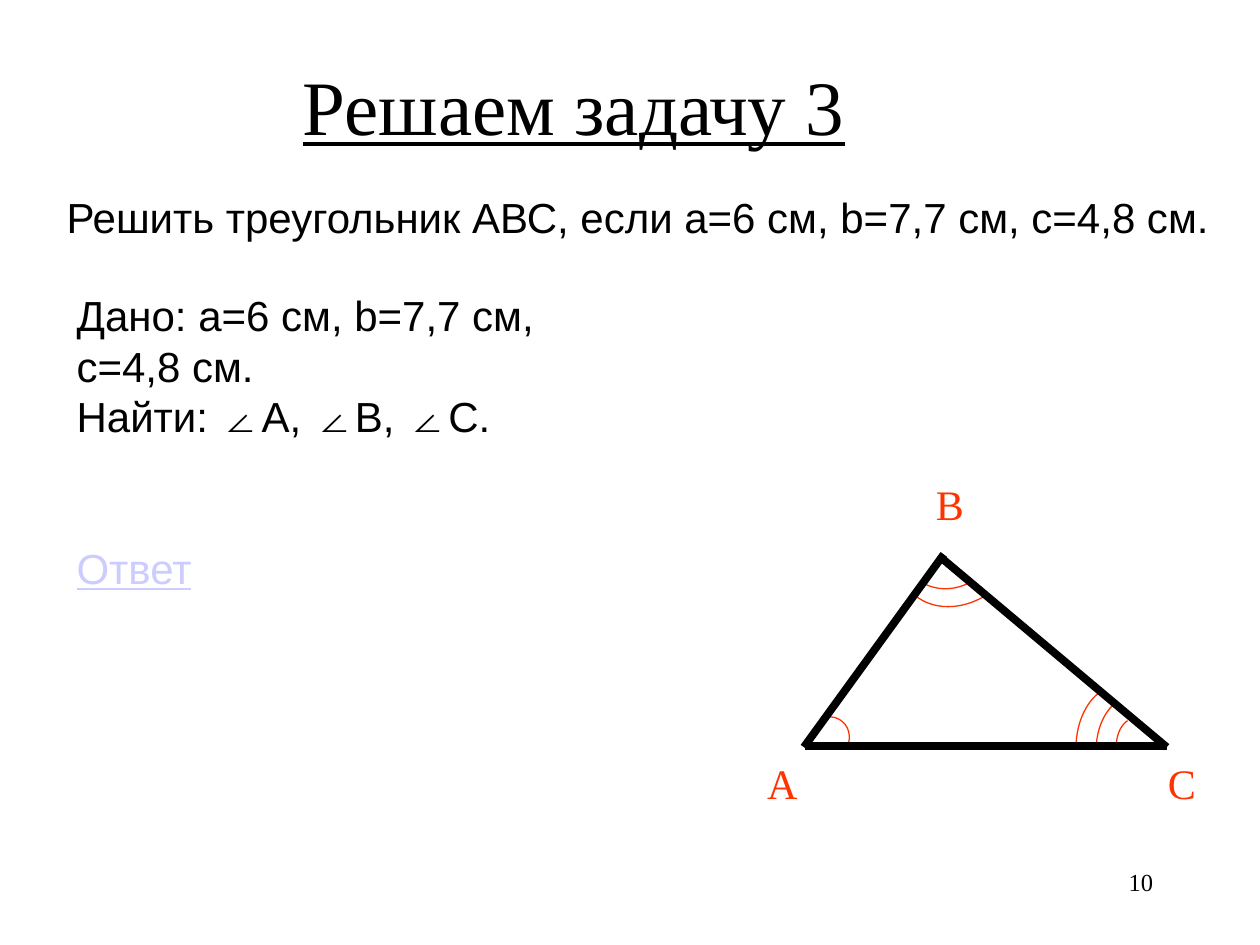
"""Build a slide that sets a triangle-solving problem beside its drawing."""
import copy

import pptx
import pptx.dml.color
import pptx.enum.shapes
import pptx.enum.text
import pptx.oxml.ns
import pptx.util
from lxml import etree

Inches = pptx.util.Inches
Pt = pptx.util.Pt
ALIGN = pptx.enum.text.PP_ALIGN
qn = pptx.oxml.ns.qn

THEME = {
    "sans": "Arial", "serif": "Times New Roman",
    "ink": "000000", "accent": "FF3300", "link": "CCCCFF",
    "title": 44, "body": 24, "number": 14,
    "side": 4.5, "arc": 0.75, "answer_gap": 58,
}

TITLE = "Решаем задачу 3"
PROBLEM = "Решить треугольник АВС, если a=6 см, b=7,7 см, c=4,8 см."
GIVEN = [
    ["Дано: a=6 см, b=7,7 см,"],
    ["c=4,8 см."],
    ["Найти: ", "∠", "А, ", "∠", "B, ", "∠", "C."],
]
ANSWER = "Ответ"
PAGE_NUMBER = "10"

SIDES = [
    ((7.45, 4.41), (9.26, 5.93)),
    ((6.38, 5.93), (7.49, 4.4)),
    ((6.39, 5.92), (9.26, 5.92)),
]
VERTEX_LABELS = [("C", 9.17, 5.96), ("А", 5.99, 5.96), ("В", 7.33, 3.75)]
ANGLE_ARCS = [
    {"curve": [(8.84, 5.59), (8.76, 5.66), (8.7, 5.8), (8.7, 5.95)],
     "center": (8.94, 5.95)},
    {"curve": [(8.75, 5.48), (8.63, 5.55), (8.54, 5.73), (8.54, 5.93)],
     "center": (8.86, 5.93)},
    {"curve": [(6.56, 5.69), (6.57, 5.69), (6.59, 5.69), (6.6, 5.69),
               (6.69, 5.7), (6.75, 5.78), (6.74, 5.87),
               (6.74, 5.89), (6.73, 5.9), (6.73, 5.92)],
     "center": (6.58, 5.85)},
    {"curve": [(7.72, 4.61), (7.59, 4.69), (7.44, 4.69), (7.33, 4.63)],
     "center": (7.55, 4.25)},
    {"curve": [(7.8, 4.74), (7.62, 4.84), (7.42, 4.84), (7.28, 4.74)],
     "center": (7.65, 4.27)},
    {"curve": [(8.95, 5.72), (8.9, 5.75), (8.86, 5.83), (8.86, 5.92)],
     "center": (9.02, 5.92)},
]


def color(name):
    return pptx.dml.color.RGBColor.from_string(THEME[name])


def add_run(paragraph, text, size, font, ink="ink", underline=None):
    run = paragraph.add_run()
    run.text = text
    run.font.size = Pt(THEME[size])
    run.font.name = THEME[font]
    run.font.color.rgb = color(ink)
    run.font.underline = underline


def add_text_box(slide, left, top, width, height):
    box = slide.shapes.add_textbox(
        Inches(left), Inches(top), Inches(width), Inches(height))
    box.text_frame.word_wrap = True
    return box.text_frame


def add_title(slide):
    title = slide.shapes.title
    title.left, title.top = Inches(0.75), Inches(0)
    title.width, title.height = Inches(7.61), Inches(1.25)
    title.text_frame.vertical_anchor = pptx.enum.text.MSO_ANCHOR.BOTTOM
    paragraph = title.text_frame.paragraphs[0]
    paragraph.alignment = ALIGN.CENTER
    add_run(paragraph, TITLE, "title", "serif", underline=True)


def add_problem(slide):
    frame = add_text_box(slide, 0.43, 1.47, 9.57, 0.5)
    add_run(frame.paragraphs[0], PROBLEM, "body", "sans")
    frame = add_text_box(slide, 0.51, 2.25, 4.8, 2.5)
    paragraph = frame.paragraphs[0]
    for line in GIVEN:
        for text in line:
            add_run(paragraph, text, "body", "sans")
        paragraph = frame.add_paragraph()
    paragraph.space_before = Pt(THEME["answer_gap"])
    add_run(paragraph, ANSWER, "body", "sans", "link", True)


def add_arc(slide, curve, center):
    points = [(Inches(x), Inches(y)) for x, y in curve + [center]]
    builder = slide.shapes.build_freeform(*points[0])
    builder.add_line_segments(points[1:], close=False)
    arc = builder.convert_to_shape()
    arc.shadow.inherit = False
    arc.fill.background()
    arc.line.color.rgb = color("accent")
    arc.line.width = Pt(THEME["arc"])

    outline = next(arc._element.iter(qn("a:path")))
    segments = list(outline)
    radius = segments[-1]
    controls = [segment[0] for segment in segments[1:-1]]
    for segment in segments[1:]:
        outline.remove(segment)
    for start in range(0, len(controls), 3):
        bezier = etree.SubElement(outline, qn("a:cubicBezTo"))
        bezier.extend(controls[start:start + 3])
    sector = copy.deepcopy(outline)
    sector.set("stroke", "0")
    sector.append(radius)
    etree.SubElement(sector, qn("a:close"))
    outline.set("fill", "none")
    outline.addnext(sector)


def add_side(slide, start, end):
    side = slide.shapes.add_connector(
        pptx.enum.shapes.MSO_CONNECTOR.STRAIGHT,
        *(Inches(value) for value in start + end))
    side.line.color.rgb = color("ink")
    side.line.width = Pt(THEME["side"])
    etree.SubElement(side._element.spPr, qn("a:effectLst"))


def add_triangle(slide):
    for arc in ANGLE_ARCS:
        add_arc(slide, **arc)
    for start, end in SIDES:
        add_side(slide, start, end)
    for letter, left, top in VERTEX_LABELS:
        frame = add_text_box(slide, left, top, 0.5, 0.5)
        add_run(frame.paragraphs[0], letter, "body", "serif", "accent")


def add_page_number(slide):
    paragraph = add_text_box(slide, 7.17, 6.83, 2.08, 0.5).paragraphs[0]
    paragraph.alignment = ALIGN.RIGHT
    add_run(paragraph, PAGE_NUMBER, "number", "serif")


def main():
    presentation = pptx.Presentation()
    presentation.slide_width = Inches(10)
    presentation.slide_height = Inches(7.5)
    slide = presentation.slides.add_slide(
        presentation.slide_layouts.get_by_name("Title Only"))
    add_title(slide)
    add_problem(slide)
    add_triangle(slide)
    add_page_number(slide)
    presentation.save("out.pptx")


if __name__ == "__main__":
    main()
